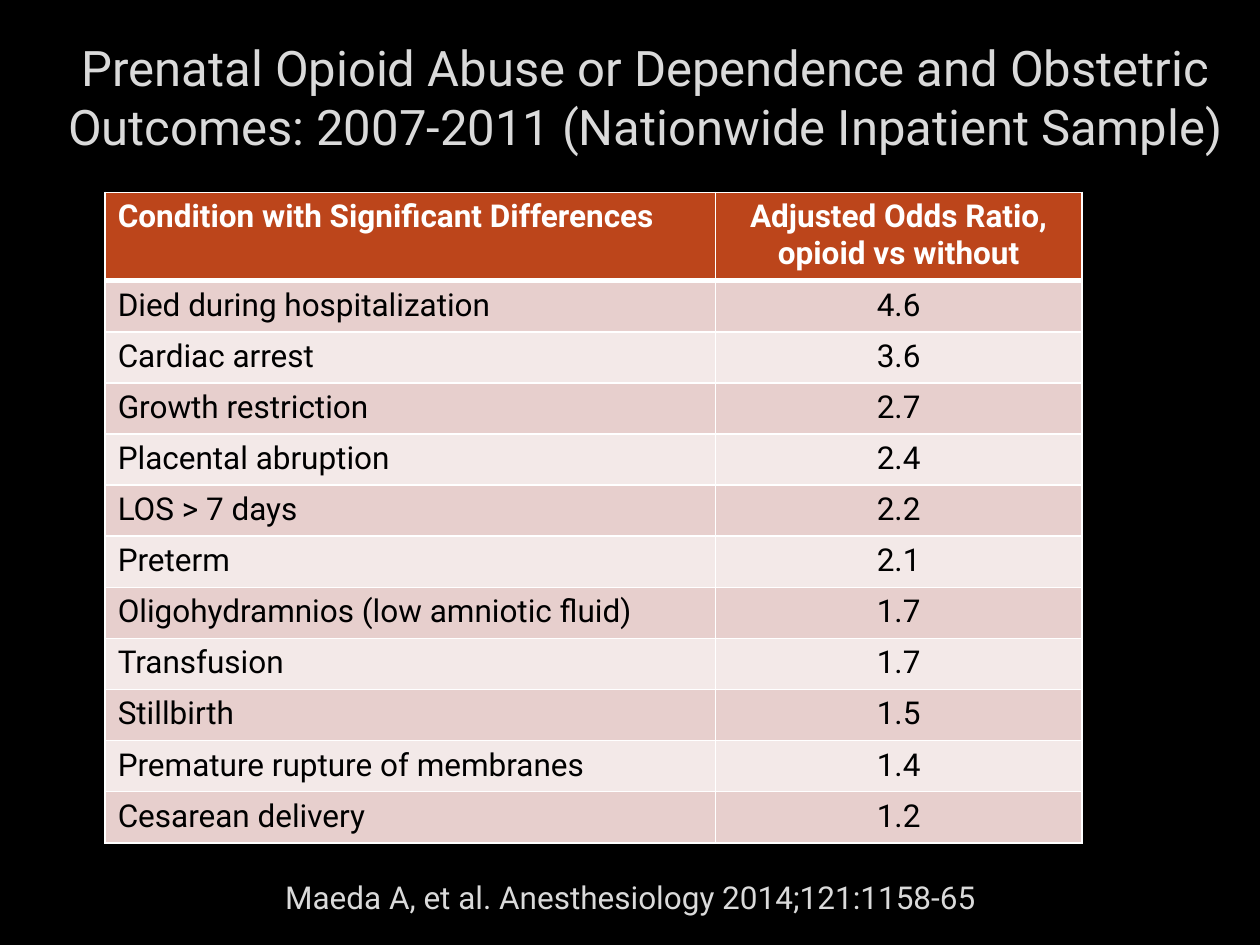
from dataclasses import dataclass

from lxml.etree import SubElement
from pptx import Presentation
from pptx.dml.color import RGBColor
from pptx.enum.text import MSO_ANCHOR, PP_ALIGN
from pptx.oxml.ns import qn
from pptx.util import Cm, Pt


@dataclass(frozen=True)
class Theme:
    font: str = "Roboto"
    background: str = "000000"
    light_text: str = "DADADA"
    dark_text: str = "000000"
    header_text: str = "FFFFFF"
    header_fill: str = "BC451B"
    band_fills: tuple = ("E7CFCD", "F3E9E8")
    border: str = "FFFFFF"
    title_size: int = 28
    body_size: int = 18
    border_width: int = 1
    header_rule_width: int = 3


THEME = Theme()

TITLE = ("Prenatal Opioid Abuse or Dependence and Obstetric Outcomes: "
         "2007-2011 (Nationwide Inpatient Sample)")
CITATION = "Maeda A, et al. Anesthesiology 2014;121:1158-65"
HEADER = ("Condition with Significant Differences",
          "Adjusted Odds Ratio, opioid vs without")
ODDS_RATIOS = (
    ("Died during hospitalization", "4.6"),
    ("Cardiac arrest", "3.6"),
    ("Growth restriction", "2.7"),
    ("Placental abruption", "2.4"),
    ("LOS > 7 days", "2.2"),
    ("Preterm", "2.1"),
    ("Oligohydramnios (low amniotic fluid)", "1.7"),
    ("Transfusion", "1.7"),
    ("Stillbirth", "1.5"),
    ("Premature rupture of membranes", "1.4"),
    ("Cesarean delivery", "1.2"),
)


def set_attributes(target, values):
    for name, value in values.items():
        setattr(target, name, value)


def write_text(text_frame, text, size, color, alignment, bold=False):
    text_frame.text = text
    paragraph = text_frame.paragraphs[0]
    paragraph.alignment = alignment
    font = paragraph.runs[0].font
    set_attributes(font, {"name": THEME.font, "size": Pt(size), "bold": bold})
    font.color.rgb = RGBColor.from_string(color)


def set_borders(cell, bottom_width):
    """Line all four sides; the lines must come before the cell's fill."""
    properties = cell._tc.get_or_add_tcPr()
    widths = {"a:lnL": THEME.border_width, "a:lnR": THEME.border_width,
              "a:lnT": THEME.border_width, "a:lnB": bottom_width}
    for position, (tag, width) in enumerate(widths.items()):
        line = SubElement(properties, qn(tag), w=str(Pt(width)))
        fill = SubElement(line, qn("a:solidFill"))
        SubElement(fill, qn("a:srgbClr"), val=THEME.border)
        properties.insert(position, line)


def add_title(slide, left, top, width, height):
    title = slide.shapes.title
    set_attributes(title, {"left": left, "top": top, "width": width, "height": height})
    set_attributes(title.text_frame, {"word_wrap": True,
                                      "vertical_anchor": MSO_ANCHOR.MIDDLE})
    write_text(title.text_frame, TITLE, THEME.title_size, THEME.light_text, PP_ALIGN.CENTER)


def add_odds_table(slide, left, top, width, height):
    rows = (HEADER,) + ODDS_RATIOS
    table = slide.shapes.add_table(len(rows), len(HEADER), left, top, width, height).table
    first_width = Cm(12.3)
    row_height = Cm(1.03)
    table.columns[0].width = first_width
    table.columns[1].width = width - first_width
    for index, row in enumerate(rows):
        is_header = index == 0
        table.rows[index].height = (height - row_height * len(ODDS_RATIOS)
                                    if is_header else row_height)
        fill_color = THEME.header_fill if is_header else THEME.band_fills[(index - 1) % 2]
        text_color = THEME.header_text if is_header else THEME.dark_text
        rule_above = index == 1
        for column, text in enumerate(row):
            cell = table.cell(index, column)
            alignment = PP_ALIGN.CENTER if column else PP_ALIGN.LEFT
            write_text(cell.text_frame, text, THEME.body_size, text_color, alignment, is_header)
            cell.fill.solid()
            cell.fill.fore_color.rgb = RGBColor.from_string(fill_color)
            set_borders(cell, THEME.header_rule_width if is_header else THEME.border_width)
            if rule_above:
                top_line = cell._tc.tcPr.find(qn("a:lnT"))
                top_line.set("w", str(Pt(THEME.header_rule_width)))


def add_citation(slide, left, top, width, height):
    text_frame = slide.shapes.add_textbox(left, top, width, height).text_frame
    text_frame.word_wrap = True
    write_text(text_frame, CITATION, THEME.body_size, THEME.light_text, PP_ALIGN.CENTER)


def main():
    presentation = Presentation()
    set_attributes(presentation, {"slide_width": Cm(25.4), "slide_height": Cm(19.05)})
    title_only = presentation.slide_layouts[5]
    slide = presentation.slides.add_slide(title_only)
    slide.background.fill.solid()
    slide.background.fill.fore_color.rgb = RGBColor.from_string(THEME.background)

    add_title(slide, Cm(0.84), Cm(0.36), Cm(24.33), Cm(3.18))
    add_citation(slide, Cm(4.24), Cm(17.58), Cm(16.94), Cm(1.07))
    add_odds_table(slide, Cm(2.12), Cm(3.88), Cm(19.69), Cm(13.1))
    presentation.save("out.pptx")


if __name__ == "__main__":
    main()
